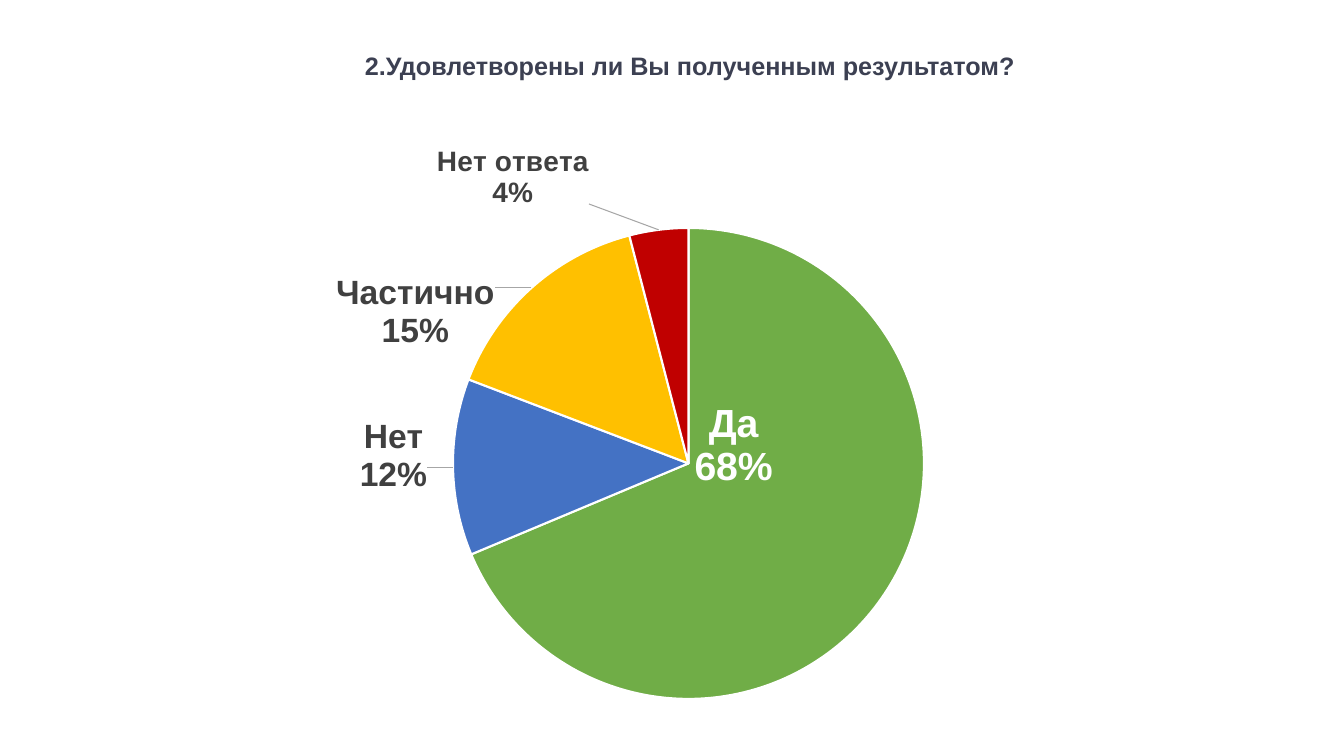
from dataclasses import dataclass

from lxml import etree
from pptx import Presentation
from pptx.chart.data import CategoryChartData
from pptx.chart.series import PieSeries
from pptx.dml.color import RGBColor
from pptx.enum.chart import XL_CHART_TYPE, XL_LABEL_POSITION
from pptx.enum.text import MSO_AUTO_SIZE
from pptx.oxml import parse_xml
from pptx.oxml.ns import nsdecls, qn
from pptx.slide import Slide
from pptx.util import Emu, Pt

PIE = XL_CHART_TYPE.PIE
CENTER = XL_LABEL_POSITION.CENTER
OUTSIDE_END = XL_LABEL_POSITION.OUTSIDE_END
FIT_TEXT = MSO_AUTO_SIZE.SHAPE_TO_FIT_TEXT

SLIDE_WIDTH, SLIDE_HEIGHT = 1344, 756
EMU_PER_PX = 12192000 / SLIDE_WIDTH
FONT = "Arial"

INK = RGBColor(0x3C, 0x40, 0x52)
GRAY = RGBColor(0x40, 0x40, 0x40)
LEADER_GRAY = RGBColor(0xA6, 0xA6, 0xA6)
WHITE = RGBColor(0xFF, 0xFF, 0xFF)
BLACK = RGBColor(0x00, 0x00, 0x00)
GREEN = RGBColor(0x70, 0xAD, 0x47)
BLUE = RGBColor(0x44, 0x72, 0xC4)
AMBER = RGBColor(0xFF, 0xC0, 0x00)
RED = RGBColor(0xC0, 0x00, 0x00)


@dataclass(frozen=True)
class Box:
    """A rectangle in px."""

    left: int
    top: int
    width: int
    height: int

    def emu(self) -> tuple[Emu, Emu, Emu, Emu]:
        """Return the rectangle in EMU."""
        return px(self.left), px(self.top), px(self.width), px(self.height)


@dataclass(frozen=True)
class Answer:
    """A pie slice and its label, shifted in px from its usual place."""

    name: str
    percent: int
    fill: RGBColor
    label_color: RGBColor
    label_size: int
    position: XL_LABEL_POSITION
    shift_x: int
    shift_y: int


TITLE_BOX = Box(355, 43, 677, 43)
CHART_BOX = Box(211, 146, 896, 598)
PIE_BOX = Box(242, 82, 471, 471)

ANSWERS = (
    Answer("Да", 68, GREEN, WHITE, 28, CENTER, -53, -83),
    Answer("Нет", 12, BLUE, GRAY, 24, OUTSIDE_END, -20, -11),
    Answer("Частично", 15, AMBER, GRAY, 24, OUTSIDE_END, -33, 66),
    Answer("Нет ответа", 4, RED, GRAY, 20, OUTSIDE_END, -69, -20),
)


def px(length: int) -> Emu:
    """Turn px into EMU."""
    return Emu(round(length * EMU_PER_PX))


def make_layout(left: int, top: int, size: tuple[int, int] | None = None) -> etree._Element:
    """Return a manual chart layout from px measured within the chart."""
    values = {"x": left / CHART_BOX.width, "y": top / CHART_BOX.height}
    modes = ""
    if size:
        values["w"] = size[0] / CHART_BOX.width
        values["h"] = size[1] / CHART_BOX.height
        modes = '<c:layoutTarget val="inner"/><c:xMode val="edge"/><c:yMode val="edge"/>'
    numbers = "".join(f'<c:{key} val="{value:.4f}"/>' for key, value in values.items())
    return parse_xml(
        f'<c:layout {nsdecls("c")}><c:manualLayout>{modes}{numbers}'
        "</c:manualLayout></c:layout>"
    )


def add_title(slide: Slide) -> None:
    """Add the question above the chart."""
    shape = slide.shapes.add_textbox(*TITLE_BOX.emu())
    frame = shape.text_frame
    frame.word_wrap = False
    frame.auto_size = FIT_TEXT
    frame.text = "2.Удовлетворены ли Вы полученным результатом?"
    paragraph = frame.paragraphs[0]
    paragraph.line_spacing = 1.07
    font = paragraph.runs[0].font
    font.name, font.size, font.bold = FONT, Pt(18), True
    font.color.rgb = INK


def style_slice(series: PieSeries, index: int, answer: Answer) -> None:
    """Colour one slice and place its label."""
    point = series.points[index]
    point.format.fill.solid()
    point.format.fill.fore_color.rgb = answer.fill
    point.format.line.color.rgb = WHITE
    point.format.line.width = Pt(1.5)
    label = point.data_label
    label.position = answer.position
    font = label.font
    font.name, font.size, font.bold = FONT, Pt(answer.label_size), True
    font.color.rgb = answer.label_color

    element = series.data_labels._element.xpath(f"c:dLbl[c:idx/@val='{index}']")[0]
    layout = make_layout(answer.shift_x, answer.shift_y)
    element.find(qn("c:idx")).addnext(layout)
    layout.addnext(
        parse_xml(
            f'<c:numFmt {nsdecls("c")} formatCode="0&quot;%&quot;" sourceLinked="0"/>'
        )
    )
    for tag, shown in (("showVal", "1"), ("showCatName", "1"), ("showPercent", "0")):
        element.find(qn(f"c:{tag}")).set("val", shown)
    separator = etree.SubElement(element, qn("c:separator"))
    separator.text = "\n"


def add_leader_lines(series: PieSeries) -> None:
    """Join moved labels to their slices with thin grey lines."""
    element = series.data_labels._element
    switch = element.find(qn("c:showLeaderLines"))
    if switch is None:
        switch = etree.SubElement(element, qn("c:showLeaderLines"))
    switch.set("val", "1")
    switch.addnext(
        parse_xml(
            f'<c:leaderLines {nsdecls("c", "a")}><c:spPr><a:ln w="9525"><a:solidFill>'
            f'<a:srgbClr val="{LEADER_GRAY}"/></a:solidFill></a:ln></c:spPr>'
            "</c:leaderLines>"
        )
    )


def add_pie(slide: Slide) -> None:
    """Add the pie chart of answers."""
    data = CategoryChartData()
    data.categories = [answer.name for answer in ANSWERS]
    data.add_series("Series 1", [answer.percent for answer in ANSWERS])
    chart = slide.shapes.add_chart(PIE, *CHART_BOX.emu(), data).chart
    chart.has_title = False
    chart.has_legend = False
    chart.font.name, chart.font.size = "Calibri", Pt(12)
    chart.font.color.rgb = BLACK

    plot = chart.plots[0]
    plot.vary_by_categories = True
    series = plot.series[0]
    labels = series.data_labels
    labels.show_value = True
    labels.show_category_name = True
    for index, answer in enumerate(ANSWERS):
        style_slice(series, index, answer)
    add_leader_lines(series)

    plot_area = chart._chartSpace.chart.plotArea
    for layout in plot_area.findall(qn("c:layout")):
        plot_area.remove(layout)
    pie_size = (PIE_BOX.width, PIE_BOX.height)
    plot_area.insert(0, make_layout(PIE_BOX.left, PIE_BOX.top, pie_size))


def main() -> None:
    """Build and save the slide."""
    presentation = Presentation()
    presentation.slide_width = px(SLIDE_WIDTH)
    presentation.slide_height = px(SLIDE_HEIGHT)
    slide = presentation.slides.add_slide(presentation.slide_layouts[6])
    add_title(slide)
    add_pie(slide)
    presentation.save("out.pptx")


if __name__ == "__main__":
    main()
